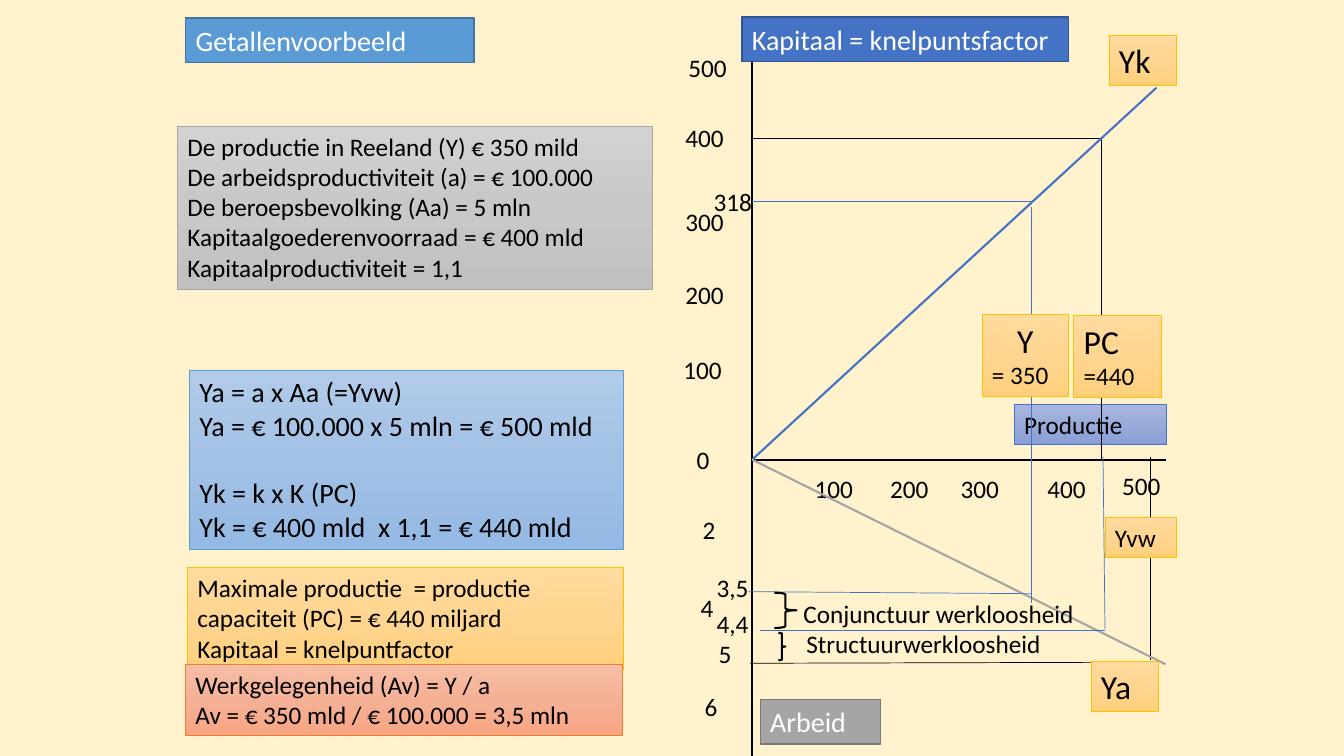
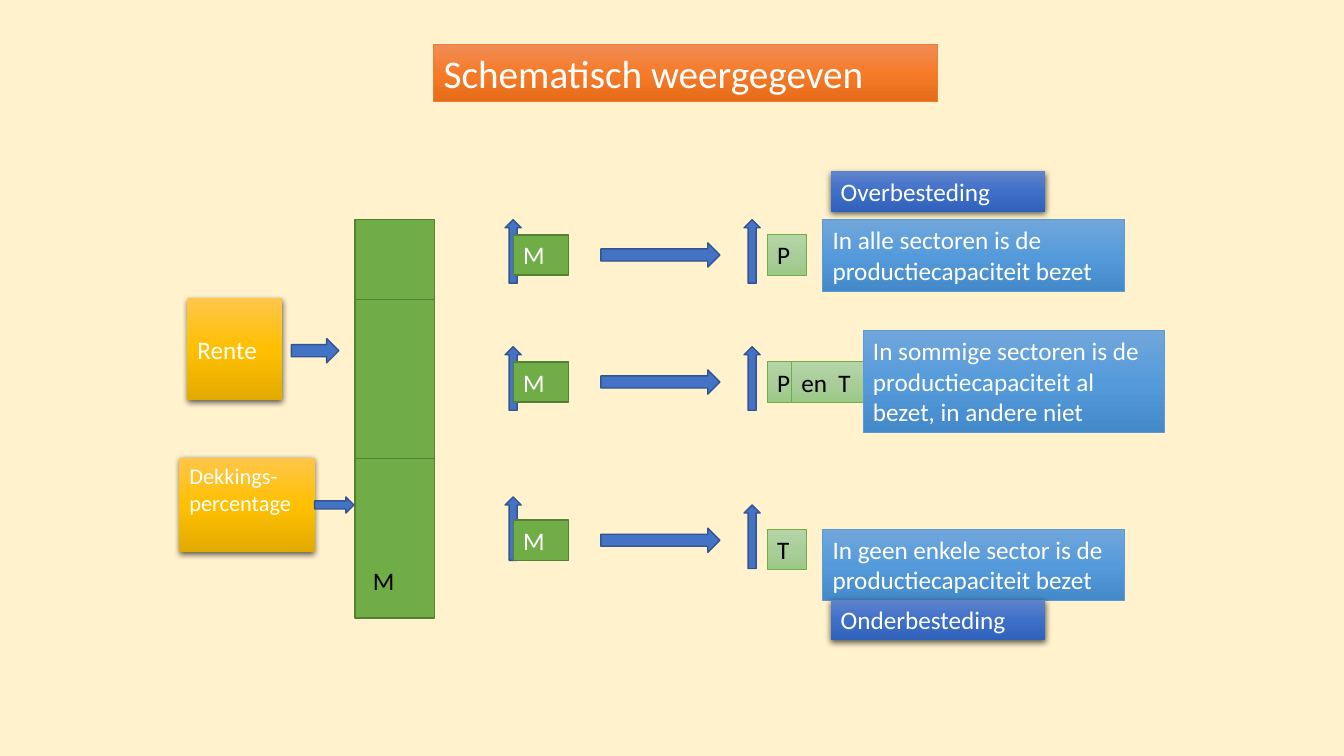
from copy import deepcopy
from dataclasses import dataclass

from lxml import etree
from pptx import Presentation
from pptx.dml.color import RGBColor
from pptx.enum import shapes, text
from pptx.oxml import ns
from pptx.util import Inches, Pt

FONT = "Calibri"
BACKGROUND = "FFF2CC"
BLACK = "000000"
WHITE = "FFFFFF"
BLUE = "4472C4"
GREY = "A5A5A5"
SHAPE = shapes.MSO_SHAPE
ANCHOR = text.MSO_ANCHOR
ALIGN = text.PP_ALIGN


@dataclass
class Style:
    fills: tuple
    line: str = ""
    weight: float = 0.5
    ink: str = BLACK
    shadow: bool = False


STYLES = {
    "title": Style(("5B9BD5",), "43739E", 1, WHITE),
    "orange title": Style(("F18C57", "F67B28", "E56C19"), "ED7D31", 0.5, WHITE),
    "capital": Style((BLUE,), "325491", 1, WHITE),
    "labour": Style((GREY,), "7A7A7A", 1, WHITE),
    "money": Style(("70AD47",), "538035", 1, WHITE),
    "grey": Style(("D2D2D2", "C8C8C8", "C0C0C0"), GREY),
    "sky": Style(("B1CBE9", "A3C1E5", "93B9E4"), "5B9BD5"),
    "gold": Style(("FFDB9E", "FFD590", "FFD07C"), "FFC000"),
    "salmon": Style(("F7BDA5", "F5B196", "F8A582"), "ED7D31"),
    "lavender": Style(("A8B7DF", "9AABD9", "889ED7"), BLUE),
    "green": Style(("B5D5A7", "AACE9A", "9CC987"), "70AD47"),
    "note": Style(("71A6DB", "559BDB", "448ACA"), "5B9BD5", 0.5, WHITE),
    "verdict": Style(("6183CB", "3E70CA", "3062BB"), ink=WHITE, shadow=True),
    "instrument": Style(("FFC64B", "FFC000", "E3AB00"), ink=WHITE, shadow=True),
}


def colour(value):
    return RGBColor.from_string(value)


def add_effects(shape):
    return etree.SubElement(shape._element.spPr, ns.qn("a:effectLst"))


def add_shadow(shape):
    effects = shape._element.spPr.find(ns.qn("a:effectLst"))
    shadow = etree.SubElement(effects, ns.qn("a:outerShdw"), blurRad="57150",
                              dist="19050", dir="5400000", algn="ctr", rotWithShape="0")
    shade = etree.SubElement(shadow, ns.qn("a:srgbClr"), val=BLACK)
    etree.SubElement(shade, ns.qn("a:alpha"), val="63000")


def paint(shape, style):
    if len(style.fills) == 1:
        shape.fill.solid()
        shape.fill.fore_color.rgb = colour(style.fills[0])
    else:
        shape.fill.gradient()
        shape.fill.gradient_angle = 270
        stops = shape._element.spPr.find(".//" + ns.qn("a:gsLst"))
        stops.insert(1, deepcopy(stops[0]))
        for index, stop in enumerate(shape.fill.gradient_stops):
            stop.position = index / 2
            stop.color.rgb = colour(style.fills[index])
    if style.line:
        shape.line.color.rgb = colour(style.line)
        shape.line.width = Pt(style.weight)
    else:
        shape.line.fill.background()
    shape.shadow.inherit = False
    if style.shadow:
        add_shadow(shape)


def write(shape, lines, sizes, ink, anchor=ANCHOR.TOP):
    frame = shape.text_frame
    frame.text = "\n".join(lines)
    frame.word_wrap = True
    frame.auto_size = text.MSO_AUTO_SIZE.NONE
    frame.vertical_anchor = anchor
    for index, paragraph in enumerate(frame.paragraphs):
        paragraph.alignment = ALIGN.LEFT
        paragraph.line_spacing = 1.0
        for run in paragraph.runs:
            run.font.name = FONT
            run.font.size = Pt(sizes[min(index, len(sizes) - 1)])
            run.font.color.rgb = colour(ink)


def add_block(slide, left, top, width, height, style_name, lines=(), sizes=(18,),
              preset=SHAPE.RECTANGLE, anchor=ANCHOR.TOP):
    style = STYLES[style_name]
    shape = slide.shapes.add_shape(preset, Inches(left), Inches(top),
                                   Inches(width), Inches(height))
    paint(shape, style)
    if lines:
        write(shape, lines, sizes, style.ink, anchor)
    return shape


def add_label(slide, left, top, label, width=0.68):
    box = slide.shapes.add_textbox(Inches(left), Inches(top), Inches(width), Inches(0.4))
    write(box, [label], (18,), BLACK)


def add_line(slide, left, top, start, end, ink=BLACK, weight=0.5):
    line = slide.shapes.add_connector(
        shapes.MSO_CONNECTOR.STRAIGHT,
        Inches(left + start[0]), Inches(top + start[1]),
        Inches(left + end[0]), Inches(top + end[1]))
    line.line.color.rgb = colour(ink)
    line.line.width = Pt(weight)
    add_effects(line)


def add_title_slide(presentation, title, box, style_name, size):
    slide = presentation.slides.add_slide(presentation.slide_layouts[5])
    shape = slide.shapes.title
    shape.left, shape.top, shape.width, shape.height = map(Inches, box)
    paint(shape, STYLES[style_name])
    write(shape, [title], (size,), STYLES[style_name].ink)
    return slide


def add_calculations(slide, left, top):
    add_block(slide, left, top, 4.71, 1.62, "grey", [
        "De productie in Reeland (Y) € 350 mild",
        "De arbeidsproductiviteit (a) = € 100.000",
        "De beroepsbevolking (Aa) = 5 mln",
        "Kapitaalgoederenvoorraad = € 400 mld",
        "Kapitaalproductiviteit = 1,1"])
    formulas = add_block(slide, left + 0.12, top + 2.42, 4.3, 1.78, "sky", [
        "Ya = a x Aa (=Yvw)",
        "Ya = € 100.000 x 5 mln = € 500 mld",
        "Yk = k x K (PC)",
        "Yk = € 400 mld  x 1,1 = € 440 mld"], (20,))
    formulas.text_frame.paragraphs[2].space_before = Pt(24)
    add_block(slide, left + 0.1, top + 4.38, 4.32, 1.01, "gold", [
        "Maximale productie  = productie capaciteit (PC) = € 440 miljard",
        "Kapitaal = knelpuntfactor"])
    add_block(slide, left + 0.08, top + 5.34, 4.33, 0.71, "salmon", [
        "Werkgelegenheid (Av) = Y / a",
        "Av = € 350 mld / € 100.000 = 3,5 mln"])


def add_axes(slide, left, top):
    add_line(slide, left, top, (0, -4.16), (0, 2.94), weight=1.5)
    add_line(slide, left, top, (0, 0), (4.1, 0), weight=1.5)
    add_block(slide, left - 0.1, top - 4.39, 3.24, 0.44, "capital",
              ["Kapitaal = knelpuntsfactor"], (20,))
    add_block(slide, left + 0.08, top + 2.38, 1.19, 0.44, "labour", ["Arbeid"], (20,))
    add_block(slide, left + 2.6, top - 0.55, 1.51, 0.4, "lavender", ["Productie"])
    capital = [("500", -0.73, -4.09), ("400", -0.76, -3.4), ("318", -0.48, -2.76),
               ("300", -0.76, -2.56), ("200", -0.76, -1.84), ("100", -0.78, -1.09),
               ("0", -0.65, -0.2)]
    labour = [("2", -0.59, 0.49), ("3,5", -0.45, 1.07), ("4", -0.61, 1.27),
              ("4,4", -0.45, 1.43), ("5", -0.43, 1.72), ("6", -0.57, 2.25)]
    production = [("100", 0.52, 0.09), ("200", 1.27, 0.09), ("300", 1.97, 0.09),
                  ("400", 2.83, 0.09), ("500", 3.57, 0.06)]
    for label, x, y in capital + labour + production:
        add_label(slide, left + x, top + y, label)


def add_curves(slide, left, top):
    capacity, output, full = 3.46, 2.77, 3.95
    add_line(slide, left, top, (capacity, 0), (capacity, -3.19))
    add_line(slide, left, top, (capacity, -3.19), (0, -3.19))
    add_line(slide, left, top, (0, 0), (4.01, -3.69), BLUE, 1.5)
    add_line(slide, left, top, (-0.02, 2.02), (3.92, 2.01))
    add_line(slide, left, top, (full, -0.03), (full, 1.99))
    add_line(slide, left, top, (0, 0), (4.1, 2.03), GREY, 1.5)
    for start, end in [((3.48, -0.03), (3.5, 1.68)),
                       ((0.08, 1.69), (3.5, 1.69)),
                       ((output, 1.42), (output, -2.51)),
                       ((output, -2.56), (0, -2.56)),
                       ((output, 1.33), (-0.04, 1.31))]:
        add_line(slide, left, top, start, end, BLUE)


def add_tags(slide, left, top):
    add_block(slide, left + 3.19, top - 1.43, 0.87, 0.81, "gold", ["PC", "=440"], (24, 18))
    output = add_block(slide, left + 2.28, top - 1.44, 0.86, 0.81, "gold",
                       ["Y", "= 350"], (24, 18))
    output.text_frame.paragraphs[0].alignment = ALIGN.CENTER
    add_block(slide, left + 3.36, top + 2, 0.67, 0.5, "gold", ["Ya"], (24,))
    add_block(slide, left + 3.54, top - 4.21, 0.67, 0.5, "gold", ["Yk"], (24,))
    add_block(slide, left + 3.5, top + 0.57, 0.71, 0.4, "gold", ["Yvw"])


def add_unemployment(slide, left, top):
    add_label(slide, left + 0.19, top + 0.01, "Conjunctuur werkloosheid", 2.98)
    add_label(slide, left + 0.22, top + 0.3, "Structuurwerkloosheid", 2.98)
    for x, y, width, height in [(0, 0, 0.22, 0.35), (0.04, 0.4, 0.07, 0.27)]:
        brace = slide.shapes.add_shape(SHAPE.RIGHT_BRACE, Inches(left + x), Inches(top + y),
                                       Inches(width), Inches(height))
        brace.fill.background()
        brace.line.color.rgb = colour(BLACK)
        brace.line.width = Pt(1.5)
        brace.shadow.inherit = False


def add_money_column(slide, left, top):
    part = 0.79
    for start, count in [(0, 1), (1, 2), (3, 2)]:
        add_block(slide, left, top + start * part, part, count * part, "money")
    add_label(slide, left + 0.08, top + 3.38, "M")


def add_instruments(slide, left, top):
    add_block(slide, left + 0.08, top, 0.94, 1.01, "instrument", ["Rente"],
              anchor=ANCHOR.MIDDLE)
    add_block(slide, left, top + 1.58, 1.34, 0.94, "instrument",
              ["Dekkings-percentage"], (16,))
    for x, y, width, height in [(1.11, 0.4, 0.47, 0.24), (1.34, 1.97, 0.39, 0.16)]:
        add_block(slide, left + x, top + y, width, height, "capital",
                  preset=SHAPE.RIGHT_ARROW)


def add_effect_row(slide, left, top, results, money_shift=0, result_shift=0):
    add_block(slide, left + 0.95, top + 0.23, 1.18, 0.24, "capital",
              preset=SHAPE.RIGHT_ARROW)
    for x, y in [(0, money_shift), (2.37, 0)]:
        add_block(slide, left + x, top + y, 0.16, 0.63, "capital", preset=SHAPE.UP_ARROW)
    add_block(slide, left + 0.08, top + 0.15, 0.55, 0.4, "money", ["M"])
    for label, x, width in results:
        add_block(slide, left + x, top + 0.15 + result_shift, width, 0.4, "green", [label])


def add_conclusions(slide, left, top):
    for x, y, height, note in [
            (0, 3.55, 0.71, "In geen enkele sector is de productiecapaciteit bezet"),
            (0.4, 1.58, 1.01,
             "In sommige sectoren is de productiecapaciteit al bezet, in andere niet"),
            (0, 0.48, 0.71, "In alle sectoren is de productiecapaciteit bezet")]:
        add_block(slide, left + x, top + y, 2.99, height, "note", [note])
    for y, verdict in [(4.25, "Onderbesteding"), (0, "Overbesteding")]:
        add_block(slide, left + 0.08, top + y, 2.13, 0.4, "verdict", [verdict])


def build_example(presentation):
    slide = add_title_slide(presentation, "Getallenvoorbeeld",
                            (1.84, 0.18, 2.86, 0.44), "title", 20)
    add_calculations(slide, 1.76, 1.25)
    for add_part in (add_axes, add_curves, add_tags):
        add_part(slide, 7.46, 4.56)
    add_unemployment(slide, 7.68, 5.88)


def build_scheme(presentation):
    slide = add_title_slide(presentation, "Schematisch weergegeven",
                            (4.3, 0.44, 5, 0.57), "orange title", 28)
    add_money_column(slide, 3.52, 2.18)
    add_instruments(slide, 1.78, 2.96)
    add_effect_row(slide, 5.01, 2.18, [("P", 2.6, 0.39)])
    add_effect_row(slide, 5.01, 3.44, [("P", 2.6, 0.39), ("en  T", 2.84, 0.94)])
    add_effect_row(slide, 5.01, 5.01, [("T", 2.6, 0.39)], -0.08, 0.09)
    add_conclusions(slide, 8.16, 1.7)


def main():
    presentation = Presentation()
    presentation.slide_width = Inches(13.33)
    presentation.slide_height = Inches(7.5)
    background = presentation.slide_master.background.fill
    background.solid()
    background.fore_color.rgb = colour(BACKGROUND)
    build_example(presentation)
    build_scheme(presentation)
    presentation.save("out.pptx")


if __name__ == "__main__":
    main()
